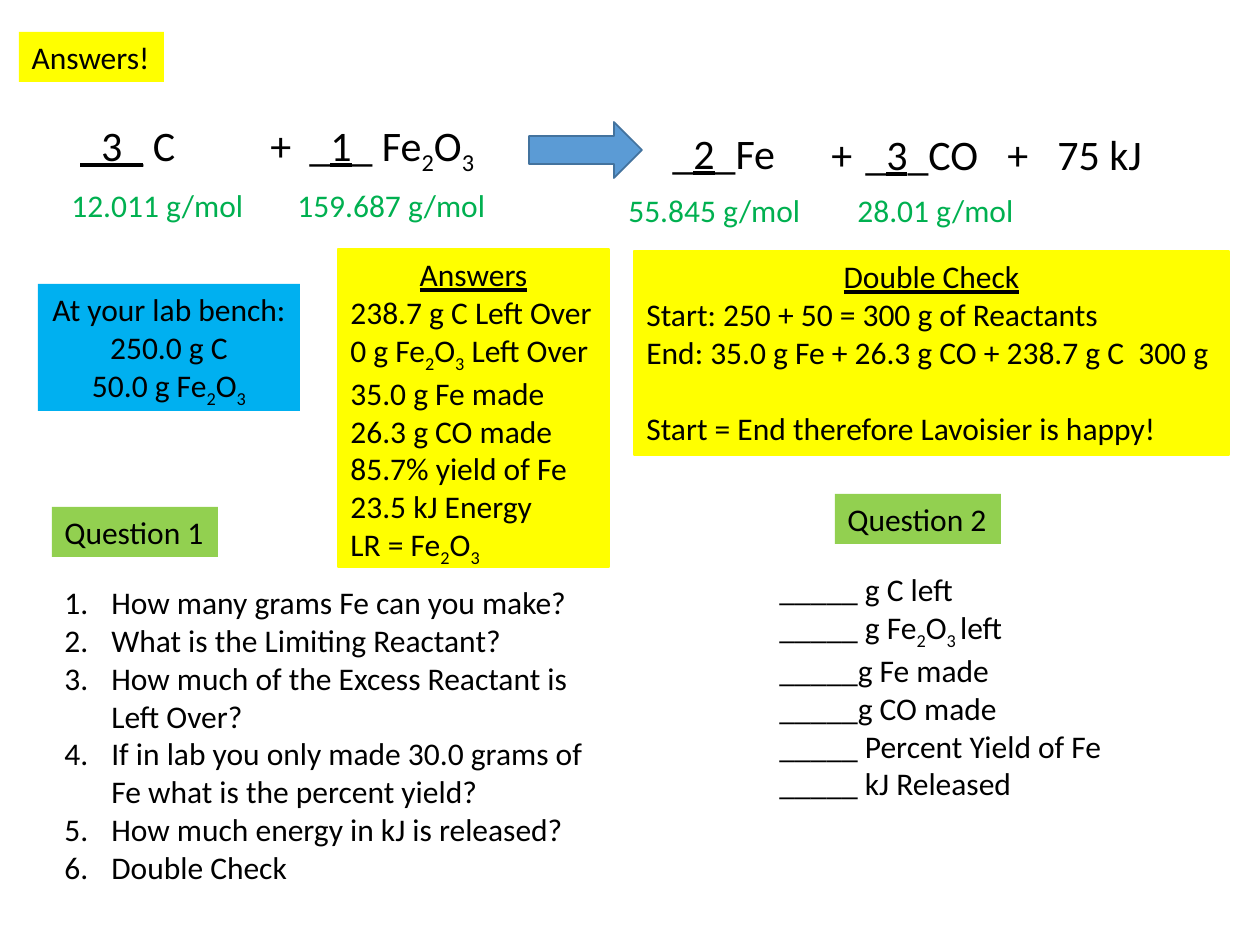
from pptx import Presentation
from pptx.dml.color import RGBColor
from pptx.enum.shapes import MSO_SHAPE
from pptx.enum.text import MSO_ANCHOR, MSO_AUTO_SIZE, PP_ALIGN
from pptx.oxml.ns import qn
from pptx.util import Emu, Pt
from lxml import etree

RECT, ARROW = MSO_SHAPE.RECTANGLE, MSO_SHAPE.RIGHT_ARROW
LEFT, MID = PP_ALIGN.LEFT, PP_ALIGN.CENTER
TOP = MSO_ANCHOR.TOP
GROW, FIXED = MSO_AUTO_SIZE.SHAPE_TO_FIT_TEXT, MSO_AUTO_SIZE.NONE
SCALE = 914400 / 126
FONT = "Calibri"
INK = {"black": "000000", "mass": "00B050", "lab": "00B0F0", "task": "92D050",
       "key": "FFFF00", "arrow": "5B9BD5", "edge": "43739E"}
SUB, LINE = "sub", "line"
OXIDE = ["Fe", ("2", SUB), "O", ("3", SUB)]

BENCH = [["At your lab bench:"], ["250.0 g C"], ["50.0 g ", *OXIDE]]
RESULTS = [[("Answers", LINE)], ["238.7 g C Left Over"],
           ["0 g ", *OXIDE, " Left Over"], ["35.0 g Fe made"],
           ["26.3 g CO made"], ["85.7% yield of Fe"], ["23.5 kJ Energy"],
           ["LR = ", *OXIDE]]
CHECK = [[("Double Check", LINE)], ["Start: 250 + 50 = 300 g of Reactants"],
         ["End: 35.0 g Fe + 26.3 g CO + 238.7 g C  300 g"],
         ["Start = End therefore Lavoisier is happy!"]]
STEPS = [["How many grams Fe can you make?"], ["What is the Limiting Reactant?"],
         ["How much of the Excess Reactant is Left Over?"],
         ["If in lab you only made 30.0 grams of Fe what is the percent yield?"],
         ["How much energy in kJ is released?"], ["Double Check"]]
BLANKS = [["_____ g C left"],
          ["_____ g ", *OXIDE[:3], ("3 ", SUB), "left"],
          ["_____g Fe made"], ["_____g CO made"],
          ["_____ Percent Yield of Fe"], ["_____ kJ Released"]]
TERMS = [
    ((68, 113, 140, 63), [("_3_", LINE), " C"]),
    ((258, 113, 47, 63), ["+"]),
    ((297, 113, 195, 63), ["_", ("1", LINE), "_ ", *OXIDE]),
    ((660, 121, 130, 63), ["_", ("2", LINE), "_Fe"]),
    ((819, 122, 47, 63), ["+"]),
]
MASSES = [((59, 180, 199, 50), "12.011 g/mol"), ((285, 180, 215, 50), "159.687 g/mol"),
          ((616, 185, 199, 50), "55.845 g/mol"), ((845, 185, 183, 50), "28.01 g/mol")]


def px(n):
    """Turn pixels into EMU."""
    return Emu(round(n * SCALE))


def rgb(name):
    """Look up a named colour."""
    return RGBColor.from_string(INK[name])


def write(shape, lines, size=18, ink="black", align=LEFT, wrap=False, fit=GROW):
    """Fill a shape with lines made of plain or styled runs."""
    frame = shape.text_frame
    frame.word_wrap, frame.auto_size = wrap, fit
    frame.vertical_anchor = TOP
    for i, line in enumerate(lines):
        para = frame.add_paragraph() if i else frame.paragraphs[0]
        para.alignment = align
        for part in line:
            text, style = (part, None) if isinstance(part, str) else part
            run = para.add_run()
            run.text = text
            font = run.font
            font.name, font.size = FONT, Pt(size)
            font.color.rgb = rgb(ink)
            if style == LINE:
                font.underline = True
            elif style == SUB:
                font._element.set("baseline", "-25000")
    return frame.paragraphs


def label(slide, box, lines, **look):
    """Add a plain text box."""
    shape = slide.shapes.add_textbox(*map(px, box))
    return write(shape, lines, **look)


def block(slide, kind, box, fill, edge=None, width=0.75):
    """Add a flat filled shape."""
    shape = slide.shapes.add_shape(kind, *map(px, box))
    shape.shadow.inherit = False
    shape.fill.solid()
    shape.fill.fore_color.rgb = rgb(fill)
    if edge:
        shape.line.color.rgb = rgb(edge)
        shape.line.width = Pt(width)
    else:
        shape.line.fill.background()
    return shape


def title(slide, box, text):
    """Place and format the slide title at a fixed size."""
    shape = slide.shapes.title
    shape.left, shape.top, shape.width, shape.height = map(px, box)
    shape.fill.solid()
    shape.fill.fore_color.rgb = rgb("key")
    write(shape, [[text]], fit=FIXED)


def number(paras, indent):
    """Number paragraphs with a hanging indent."""
    for para in paras:
        props = para._p.get_or_add_pPr()
        props.set("marL", str(px(indent)))
        props.set("indent", str(-px(indent)))
        etree.SubElement(props, qn("a:buAutoNum"), type="arabicPeriod")


def tabs(para, stops):
    """Set left tab stops on a paragraph."""
    group = etree.SubElement(para._p.get_or_add_pPr(), qn("a:tabLst"))
    for stop in stops:
        etree.SubElement(group, qn("a:tab"), pos=str(px(stop)), algn="l")


def react(slide):
    """Draw the balanced equation and its molar masses."""
    for box, line in TERMS:
        label(slide, box, [line], size=24)
    block(slide, ARROW, (529, 122, 113, 56), "arrow", "edge", 1)
    end = label(slide, (853, 122, 302, 63),
                [["_", ("3", LINE), "_CO\t+\t75 kJ"]], size=24)
    tabs(end[0], (142, 192))
    for box, text in MASSES:
        label(slide, box, [[text]], ink="mass")


def main():
    """Build and save the slide."""
    deck = Presentation()
    deck.slide_width, deck.slide_height = px(1260), px(945)
    slide = deck.slides.add_slide(deck.slide_layouts[5])
    title(slide, (19, 32, 145, 50), "Answers!")
    write(block(slide, RECT, (38, 284, 262, 127), "lab"), BENCH, align=MID)
    number(label(slide, (52, 577, 564, 344), STEPS, wrap=True), 47)
    label(slide, (767, 564, 352, 242), BLANKS)
    for left, top, text in ((52, 507, "Question 1"), (835, 494, "Question 2")):
        write(block(slide, RECT, (left, top, 166, 50), "task"), [[text]])
    for box, lines in (((338, 249, 271, 318), RESULTS), ((634, 251, 595, 204), CHECK)):
        paras = write(block(slide, RECT, box, "key", "key"), lines)
        paras[0].alignment = MID
    paras[-1].space_before = Pt(22)
    react(slide)
    deck.save("out.pptx")


if __name__ == "__main__":
    main()
